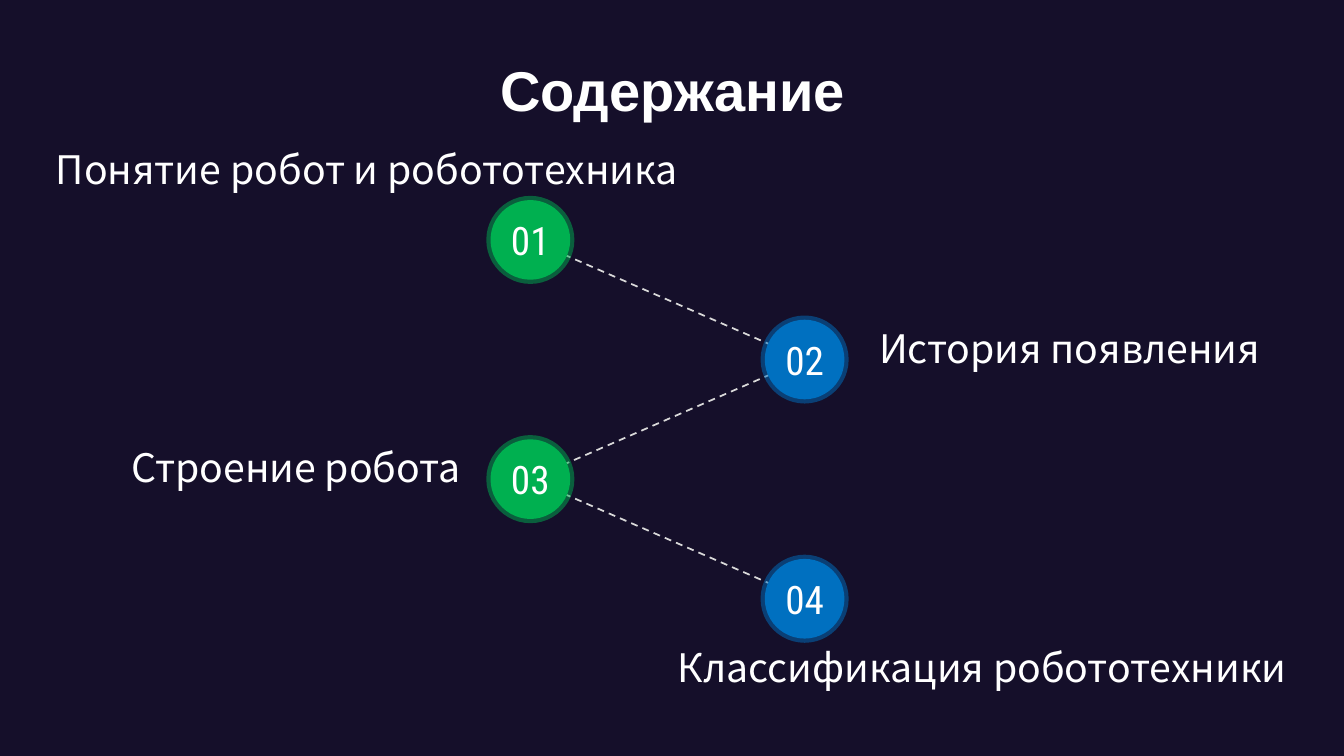
from itertools import pairwise

from lxml.etree import SubElement
from pptx import Presentation
from pptx.dml.color import RGBColor
from pptx.enum.dml import MSO_LINE
from pptx.enum.shapes import MSO_CONNECTOR, MSO_SHAPE
from pptx.enum.text import MSO_ANCHOR, PP_ALIGN
from pptx.oxml.ns import qn
from pptx.util import Inches, Pt

NIGHT = RGBColor(0x15, 0x0F, 0x2A)
WHITE = RGBColor(0xFF, 0xFF, 0xFF)
GREY = RGBColor(0xD9, 0xD9, 0xD9)
GREEN = RGBColor(0x00, 0xB0, 0x50)
BLUE = RGBColor(0x00, 0x70, 0xC0)

TITLE = {"name": "Arial", "size": Pt(40), "bold": True}
TOPIC = {"name": "Noto Sans CJK SC", "size": Pt(28)}
NUMBER = {"name": "Roboto Condensed", "size": Pt(28)}

DIAMETER = 0.79
LEFT_X, RIGHT_X = 5.26, 7.98
FIRST_Y, LAST_Y = 2.38, 5.94

TOPICS = [
    ("Понятие робот и робототехника", 0.07, 1.39, 6.75, PP_ALIGN.RIGHT),
    ("История появления", 8.62, 3.17, 4.6, PP_ALIGN.LEFT),
    ("Строение робота", 0.53, 4.35, 4.14, PP_ALIGN.RIGHT),
    ("Классификация робототехники", 6.62, 6.33, 6.6, PP_ALIGN.LEFT),
]


class ContentsSlide:
    def __init__(self, deck):
        self.slide = deck.slides.add_slide(deck.slide_layouts[6])
        self.shapes = self.slide.shapes
        self.text_color = WHITE
        backdrop = self.slide.background.fill
        backdrop.solid()
        backdrop.fore_color.rgb = NIGHT

    def wording(self, frame, words, style, align):
        paragraph = frame.paragraphs[0]
        paragraph.alignment = align
        run = paragraph.add_run()
        run.text = words
        for key, value in style.items():
            setattr(run.font, key, value)
        run.font.color.rgb = self.text_color

    def label(self, words, left, top, width, height, style, align):
        box = self.shapes.add_textbox(
            Inches(left), Inches(top), Inches(width), Inches(height)
        )
        box.text_frame.word_wrap = True
        self.wording(box.text_frame, words, style, align)

    def link(self, start, end):
        dash = self.shapes.add_connector(
            MSO_CONNECTOR.STRAIGHT, *(Inches(value) for value in (*start, *end))
        )
        for key, value in {"width": Pt(1.25), "dash_style": MSO_LINE.DASH}.items():
            setattr(dash.line, key, value)
        dash.line.color.rgb = GREY
        SubElement(dash.element.spPr, qn("a:effectLst"))

    def badge(self, number, center, color):
        x, y = center
        circle = self.shapes.add_shape(
            MSO_SHAPE.OVAL,
            Inches(x - DIAMETER / 2),
            Inches(y - DIAMETER / 2),
            Inches(DIAMETER),
            Inches(DIAMETER),
        )
        circle.shadow.inherit = False
        circle.fill.solid()
        circle.fill.fore_color.rgb = color
        circle.line.width = Pt(6)
        circle.line.color.rgb = color
        rim = circle.element.spPr.find(qn("a:ln"))
        tint = rim.find(".//" + qn("a:srgbClr"))
        SubElement(tint, qn("a:alpha"), val="50000")
        layout = {
            "margin_left": 0,
            "margin_right": 0,
            "margin_top": 0,
            "margin_bottom": 0,
            "word_wrap": False,
            "vertical_anchor": MSO_ANCHOR.MIDDLE,
        }
        for key, value in layout.items():
            setattr(circle.text_frame, key, value)
        self.wording(circle.text_frame, f"{number:02}", NUMBER, PP_ALIGN.CENTER)


def main():
    deck = Presentation()
    deck.slide_width = Inches(13.33)
    deck.slide_height = Inches(7.5)
    contents = ContentsSlide(deck)

    step = (LAST_Y - FIRST_Y) / (len(TOPICS) - 1)
    centers = [
        (RIGHT_X if index % 2 else LEFT_X, FIRST_Y + index * step)
        for index in range(len(TOPICS))
    ]
    for start, end in pairwise(centers):
        contents.link(start, end)
    for index, center in enumerate(centers):
        contents.badge(index + 1, center, BLUE if index % 2 else GREEN)
    for words, left, top, width, align in TOPICS:
        contents.label(words, left, top, width, 0.57, TOPIC, align)
    contents.label("Содержание", 4.84, 0.5, 3.66, 0.77, TITLE, PP_ALIGN.CENTER)

    deck.save("out.pptx")


if __name__ == "__main__":
    main()
